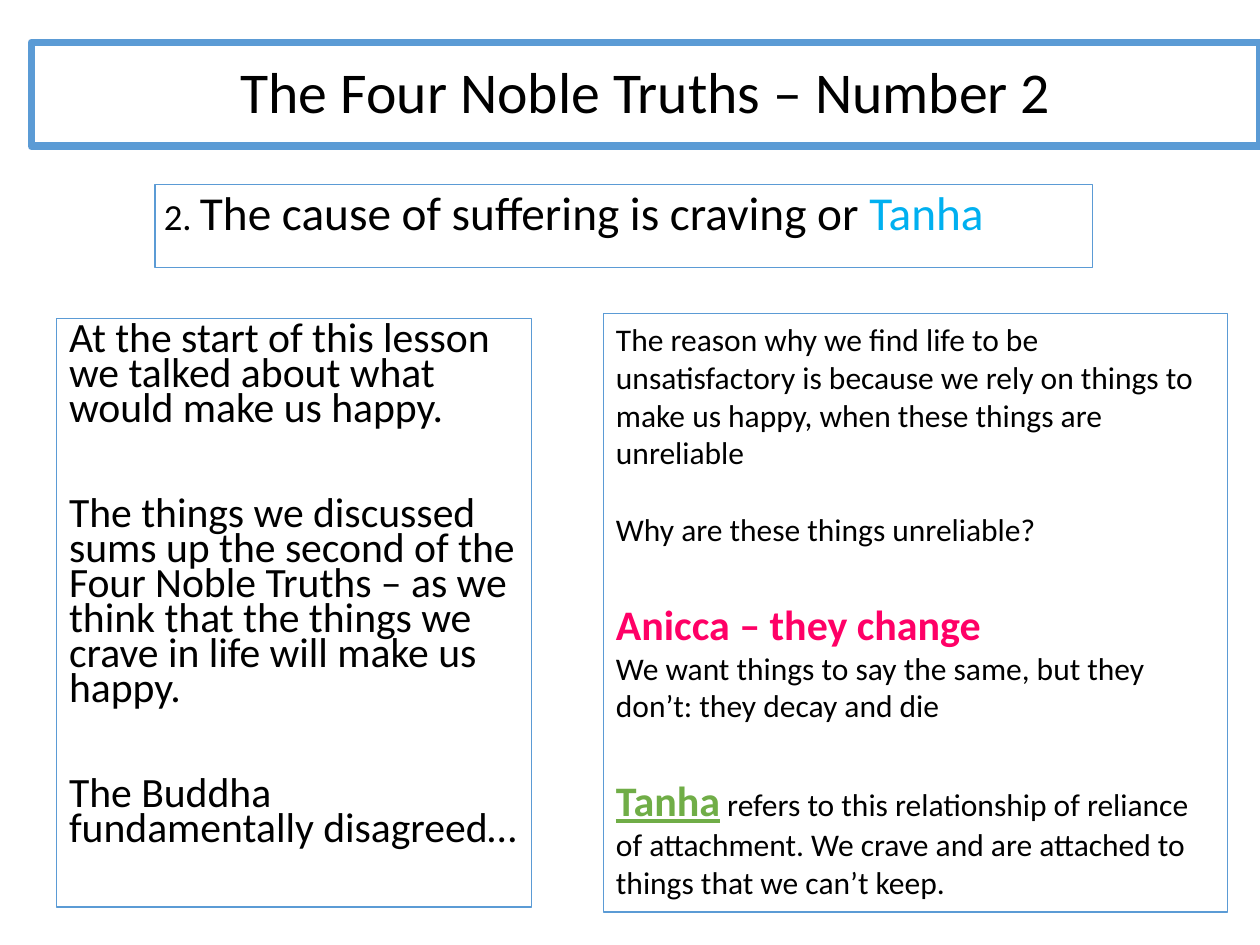
import pptx
import pptx.util
import pptx.dml.color
import pptx.enum.text

WIDTH, HEIGHT = 10, 7.5
BLUE, BLACK = "5B9BD5", "000000"


def color(value):
    """Return the colour for a hex string."""
    return pptx.dml.color.RGBColor.from_string(value)


def place(sp, left, top, width, height):
    """Place a shape by shares of the slide's size."""
    sp.left, sp.width = (pptx.util.Inches(v * WIDTH) for v in (left, width))
    sp.top, sp.height = (pptx.util.Inches(v * HEIGHT) for v in (top, height))


def frame(sp, area, line=0.75, inset=(0.1, 0.05), anchor="TOP"):
    """Give a text shape its place, outline and margins."""
    place(sp, *area)
    sp.fill.background()
    sp.line.color.rgb = color(BLUE)
    sp.line.width = pptx.util.Pt(line)
    tf = sp.text_frame
    tf.word_wrap = True
    tf.auto_size = pptx.enum.text.MSO_AUTO_SIZE.NONE
    tf.vertical_anchor = pptx.enum.text.MSO_ANCHOR[anchor]
    tf.margin_left = tf.margin_right = pptx.util.Inches(inset[0])
    tf.margin_top = tf.margin_bottom = pptx.util.Inches(inset[1])
    return tf


def add_run(p, text, size=18, fill=BLACK, bold=False, underline=False):
    """Append formatted text to a paragraph."""
    r = p.add_run()
    r.text = text
    r.font.name = "Calibri"
    r.font.size = pptx.util.Pt(size)
    r.font.color.rgb = color(fill)
    r.font.bold = bold
    r.font.underline = underline


def write(tf, paragraphs, spacing=1.0, align="LEFT"):
    """Fill a frame with pairs of space before and runs."""
    for i, (before, runs) in enumerate(paragraphs):
        p = tf.add_paragraph() if i else tf.paragraphs[0]
        p.alignment = pptx.enum.text.PP_ALIGN[align]
        p.line_spacing = spacing
        p.space_before = pptx.util.Pt(before)
        for text, style in runs:
            add_run(p, text, **style)


def add_box(s, area, paragraphs, spacing=1.0, **style):
    """Add an outlined text box."""
    sp = s.shapes.add_textbox(0, 0, 0, 0)
    write(frame(sp, area, **style), paragraphs, spacing)


def main():
    """Build and save the slide."""
    prs = pptx.Presentation()
    prs.slide_width = pptx.util.Inches(WIDTH)
    prs.slide_height = pptx.util.Inches(HEIGHT)
    s = prs.slides.add_slide(prs.slide_layouts[5])
    narrow = (0.07, 0.04)

    title = frame(s.shapes.title, (0.025, 0.045, 0.975, 0.11),
                  line=4.5, inset=narrow, anchor="MIDDLE")
    write(title, [(0, [("The Four Noble Truths – Number 2", {"size": 33})])],
          0.9, "CENTER")

    lesson = {"size": 23.8}
    add_box(s, (0.045, 0.337, 0.377, 0.623), [
        (10, [("At the start of this lesson we talked about what would make "
               "us happy.", lesson)]),
        (40, [("The things we discussed sums up the second of the Four Noble "
               "Truths – as we think that the things we crave in life will "
               "make us happy.", lesson)]),
        (40, [("The Buddha fundamentally disagreed…", lesson)]),
    ], spacing=0.7)

    add_box(s, (0.123, 0.195, 0.744, 0.088), [
        (10, [("2. ", {"size": 21}),
              ("The cause of suffering is craving or ", {"size": 27}),
              ("Tanha", {"size": 27, "fill": "00B0F0"})]),
    ], spacing=0.9, inset=narrow)

    term = {"size": 24, "bold": True}
    add_box(s, (0.479, 0.332, 0.495, 0.633), [
        (0, [("The reason why we find life to be unsatisfactory is because "
              "we rely on things to make us happy, when these things are "
              "unreliable", {})]),
        (22, [("Why are these things unreliable?", {})]),
        (29, [("Anicca – they change", {**term, "fill": "FF0066"})]),
        (0, [("We want things to say the same, but they don’t: they decay "
              "and die", {})]),
        (29, [("Tanha", {**term, "fill": "70AD47", "underline": True}),
              (" refers to this relationship of reliance of attachment. We "
               "crave and are attached to things that we can’t keep.", {})]),
    ])
    prs.save("out.pptx")


if __name__ == "__main__":
    main()
